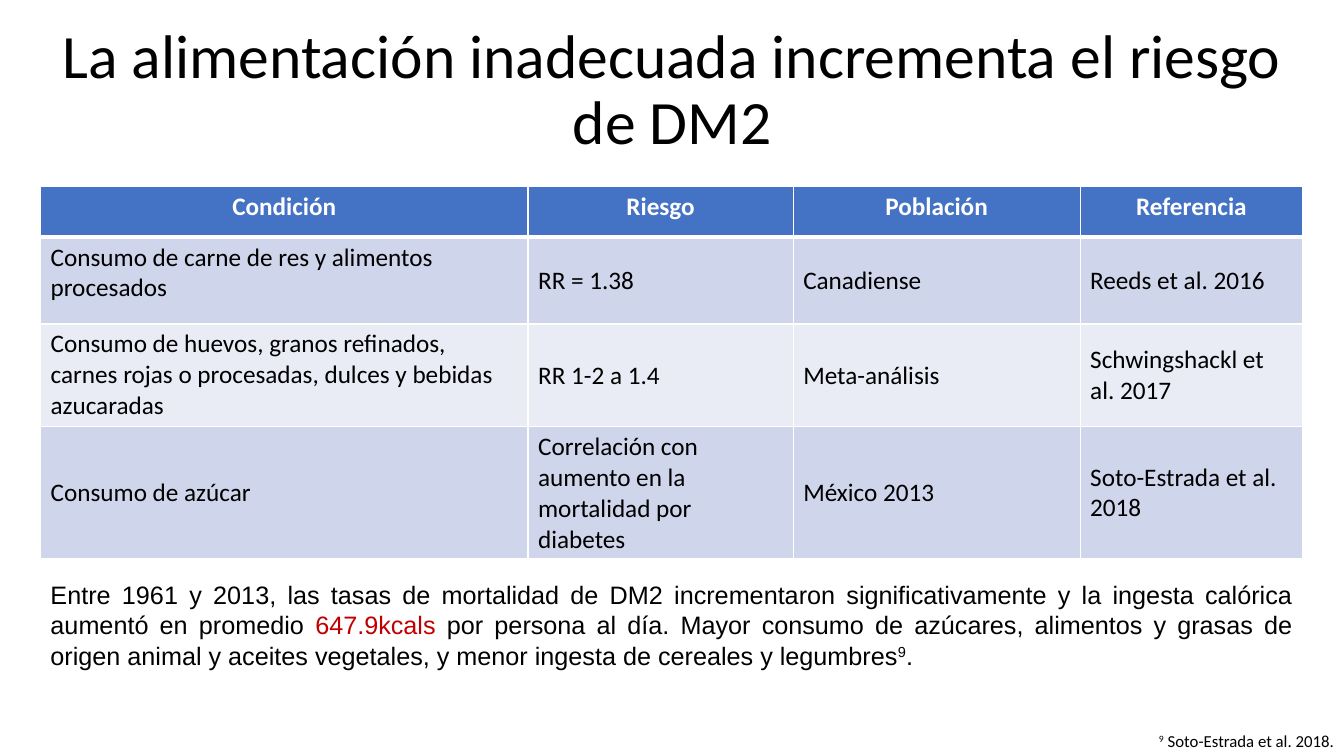
from lxml.etree import SubElement
from pptx import Presentation
from pptx.dml.color import RGBColor
from pptx.enum.text import MSO_ANCHOR as Anchor, PP_ALIGN as Align
from pptx.oxml.ns import qn
from pptx.util import Pt

BLACK, WHITE, RED = "000000", "FFFFFF", "C00000"
HEADER_FILL, BAND_FILLS = "4472C4", ("CFD5EA", "E9EBF5")
COLUMN_WIDTHS = (348.2, 189.4, 205, 159)
ROW_HEIGHTS = (36, 62, 73.5, 94.5)
ROWS = (
    ("Condición", "Riesgo", "Población", "Referencia"),
    ("Consumo de carne de res y alimentos procesados", "RR = 1.38",
     "Canadiense", "Reeds et al. 2016"),
    ("Consumo de huevos, granos refinados, carnes rojas o procesadas, dulces y bebidas azucaradas",
     "RR 1-2 a 1.4", "Meta-análisis", "Schwingshackl et al. 2017"),
    ("Consumo de azúcar", "Correlación con aumento en la mortalidad por diabetes",
     "México 2013", "Soto-Estrada et al. 2018"),
)


def color(value):
    return RGBColor.from_string(value)


def add_span(para, text, size, font="Calibri", shade=BLACK, bold=False, raised=False):
    span = para.add_run()
    span.text = text
    span.font.size = Pt(size)
    span.font.name = font
    span.font.bold = bold
    span.font.color.rgb = color(shade)
    if raised:
        span._r.get_or_add_rPr().set("baseline", "30000")


def add_text_box(page, area, align, anchor=Anchor.TOP):
    box = page.shapes.add_textbox(*map(Pt, area))
    frame = box.text_frame
    frame.word_wrap = True
    frame.vertical_anchor = anchor
    para = frame.paragraphs[0]
    para.alignment = align
    return para


def add_title(page, area):
    para = add_text_box(page, area, Align.CENTER, Anchor.MIDDLE)
    para.line_spacing = 0.9
    add_span(para, "La alimentación inadecuada incrementa el riesgo de DM2", 44)


def set_borders(cell, top, bottom):
    properties = cell._tc.get_or_add_tcPr()
    for side, width in (("L", 1), ("R", 1), ("T", top), ("B", bottom)):
        line = SubElement(properties, qn(f"a:ln{side}"), w=str(Pt(width)))
        fill = SubElement(line, qn("a:solidFill"))
        SubElement(fill, qn("a:srgbClr"), val=WHITE)


def add_risk_table(page, area):
    table = page.shapes.add_table(len(ROWS), len(COLUMN_WIDTHS), *map(Pt, area)).table
    for column, width in zip(table.columns, COLUMN_WIDTHS):
        column.width = Pt(width)
    for row, height in zip(table.rows, ROW_HEIGHTS):
        row.height = Pt(height)
    for r, texts in enumerate(ROWS):
        header = r == 0
        for c, text in enumerate(texts):
            cell = table.cell(r, c)
            set_borders(cell, 3 if r == 1 else 1, 3 if header else 1)
            cell.fill.solid()
            cell.fill.fore_color.rgb = color(HEADER_FILL if header else BAND_FILLS[(r - 1) % 2])
            at_top = header or (c == 0 and r < 3)
            cell.vertical_anchor = Anchor.TOP if at_top else Anchor.MIDDLE
            para = cell.text_frame.paragraphs[0]
            para.alignment = Align.CENTER if header else Align.LEFT
            add_span(para, text, 18, shade=WHITE if header else BLACK, bold=header)


def add_summary(page, area):
    para = add_text_box(page, area, Align.JUSTIFY)
    add_span(para, "Entre 1961 y 2013, las tasas de mortalidad de DM2 incrementaron "
             "significativamente y la ingesta calórica aumentó en promedio ", 18, "Arial")
    add_span(para, "647.9kcals", 18, "Arial", RED)
    add_span(para, " por persona al día. Mayor consumo de azúcares, alimentos y grasas de "
             "origen animal y aceites vegetales, y menor ingesta de cereales y legumbres",
             18, "Arial")
    add_span(para, "9", 18, "Arial", raised=True)
    add_span(para, ".", 18, "Arial")


def add_footnote(page, area):
    para = add_text_box(page, area, Align.RIGHT)
    add_span(para, "9", 12, raised=True)
    add_span(para, " Soto-Estrada et al. 2018.", 12)


def main():
    deck = Presentation()
    deck.slide_width, deck.slide_height = Pt(960), Pt(540)
    page = deck.slides.add_slide(deck.slide_layouts[6])
    add_title(page, (10.8, 13, 939, 104.4))
    add_risk_table(page, (29, 133.4, sum(COLUMN_WIDTHS), sum(ROW_HEIGHTS)))
    add_summary(page, (29, 410.4, 901.6, 72.7))
    add_footnote(page, (421, 518.4, 539, 21.6))
    deck.save("out.pptx")


if __name__ == "__main__":
    main()
